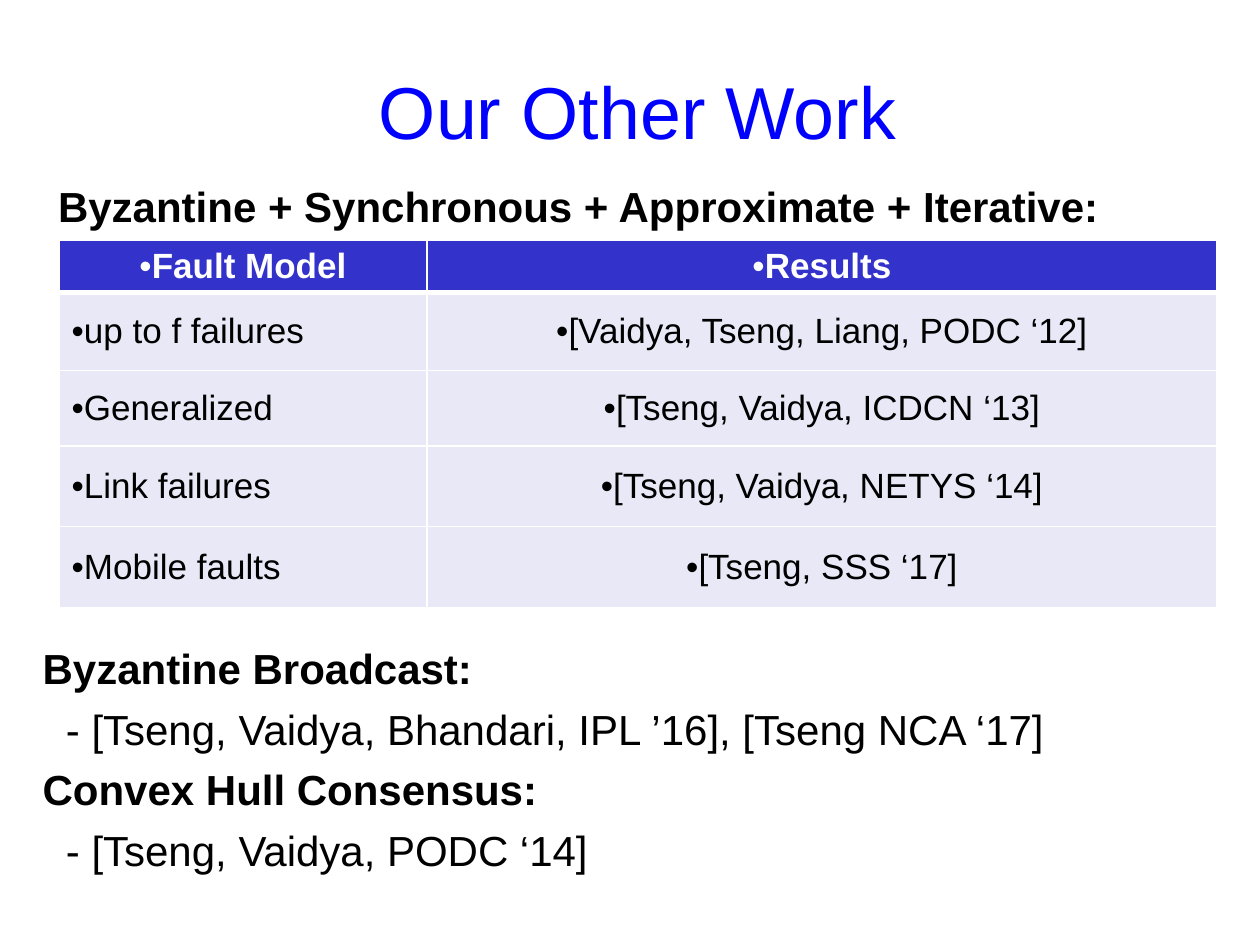
from lxml import etree
from pptx import Presentation
from pptx.dml.color import RGBColor
from pptx.enum.text import MSO_ANCHOR, PP_ALIGN
from pptx.oxml.ns import qn
from pptx.util import Pt

LEFT, CENTER = PP_ALIGN.LEFT, PP_ALIGN.CENTER
MIDDLE = MSO_ANCHOR.MIDDLE

BLUE = RGBColor(0x00, 0x00, 0xFF)
INDIGO = RGBColor(0x33, 0x33, 0xCC)
LAVENDER = RGBColor(0xE8, 0xE8, 0xF6)
WHITE = RGBColor(0xFF, 0xFF, 0xFF)
BLACK = RGBColor(0x00, 0x00, 0x00)

# Content
TITLE = "Our Other Work"
TABLE_HEADING = "Byzantine + Synchronous + Approximate + Iterative:"
TABLE_ROWS = [
    ("Fault Model", "Results"),
    ("up to f failures", "[Vaidya, Tseng, Liang, PODC ‘12]"),
    ("Generalized", "[Tseng, Vaidya, ICDCN ‘13]"),
    ("Link failures", "[Tseng, Vaidya, NETYS ‘14]"),
    ("Mobile faults", "[Tseng, SSS ‘17]"),
]
OTHER_TOPICS = [
    ("Byzantine Broadcast:", "- [Tseng, Vaidya, Bhandari, IPL ’16], [Tseng NCA ‘17]"),
    ("Convex Hull Consensus:", "- [Tseng, Vaidya, PODC ‘14]"),
]

# Layout, in points
TITLE_AREA = (26, 18, 676.8, 90)
HEADING_AREA = (17.3, 99.4, 626.4, 36)
TABLE_AREA = (33.8, 137.5, 661.7, 211.7)
TOPICS_AREA = (17.3, 363.6, 626.4, 141.1)
COLUMN_WIDTHS = (210.2, 451.5)
ROW_HEIGHTS = (29.5, 44.6, 43.2, 46.1, 46.1)
TOPIC_GAP = 5.8
CITATION_INDENT = 13.3


def write(para, text, size, color, bold=False, align=LEFT):
    para.alignment = align
    span = para.add_run()
    span.text = text
    span.font.color.rgb = color
    for name, value in {"name": "Arial", "size": Pt(size), "bold": bold}.items():
        setattr(span.font, name, value)


def add_box(page, area):
    frame = page.shapes.add_textbox(*map(Pt, area)).text_frame
    frame.word_wrap = True
    return frame


def add_bullet(para):
    props = para._p.get_or_add_pPr()
    props.set("marL", "0")
    props.set("indent", "0")
    etree.SubElement(props, qn("a:buFont"), typeface="Arial")
    etree.SubElement(props, qn("a:buChar"), char="•")


def set_borders(cell, bottom):
    props = cell._tc.get_or_add_tcPr()
    sides = {"a:lnL": 1, "a:lnR": 1, "a:lnT": 1, "a:lnB": bottom}
    for index, (side, width) in enumerate(sides.items()):
        line = etree.Element(qn(side), w=str(Pt(width)))
        fill = etree.SubElement(line, qn("a:solidFill"))
        etree.SubElement(fill, qn("a:srgbClr"), val=str(WHITE))
        props.insert(index, line)


deck = Presentation()
deck.slide_width, deck.slide_height = Pt(720), Pt(540)
page = deck.slides.add_slide(deck.slide_layouts[5])

# Title
title = page.shapes.title
for name, value in zip(("left", "top", "width", "height"), TITLE_AREA):
    setattr(title, name, Pt(value))
title.text_frame.vertical_anchor = MIDDLE
write(title.text_frame.paragraphs[0], TITLE, 42, BLUE, align=CENTER)

# Table of fault models
table = page.shapes.add_table(len(TABLE_ROWS), len(COLUMN_WIDTHS), *map(Pt, TABLE_AREA)).table
for column, width in zip(table.columns, COLUMN_WIDTHS):
    column.width = Pt(width)
for row, height in zip(table.rows, ROW_HEIGHTS):
    row.height = Pt(height)
for r, texts in enumerate(TABLE_ROWS):
    header = r == 0
    for c, text in enumerate(texts):
        cell = table.cell(r, c)
        cell.vertical_anchor = MIDDLE
        cell.fill.solid()
        cell.fill.fore_color.rgb = INDIGO if header else LAVENDER
        set_borders(cell, bottom=3 if header else 1)
        para = cell.text_frame.paragraphs[0]
        align = CENTER if header or c == 1 else LEFT
        write(para, text, 20, WHITE if header else BLACK, header, align)
        add_bullet(para)

# Heading above the table
heading = add_box(page, HEADING_AREA).paragraphs[0]
heading.space_before = Pt(TOPIC_GAP)
write(heading, TABLE_HEADING, 24, BLACK, True, CENTER)

# Other topics below the table
frame = add_box(page, TOPICS_AREA)
lines = [(text, i == 0) for topic in OTHER_TOPICS for i, text in enumerate(topic)]
for index, (text, is_topic) in enumerate(lines):
    para = frame.add_paragraph() if index else frame.paragraphs[0]
    para.space_before = Pt(TOPIC_GAP)
    write(para, text, 24, BLACK, is_topic)
    if not is_topic:
        para._p.get_or_add_pPr().set("marL", str(Pt(CITATION_INDENT)))

deck.save("out.pptx")
